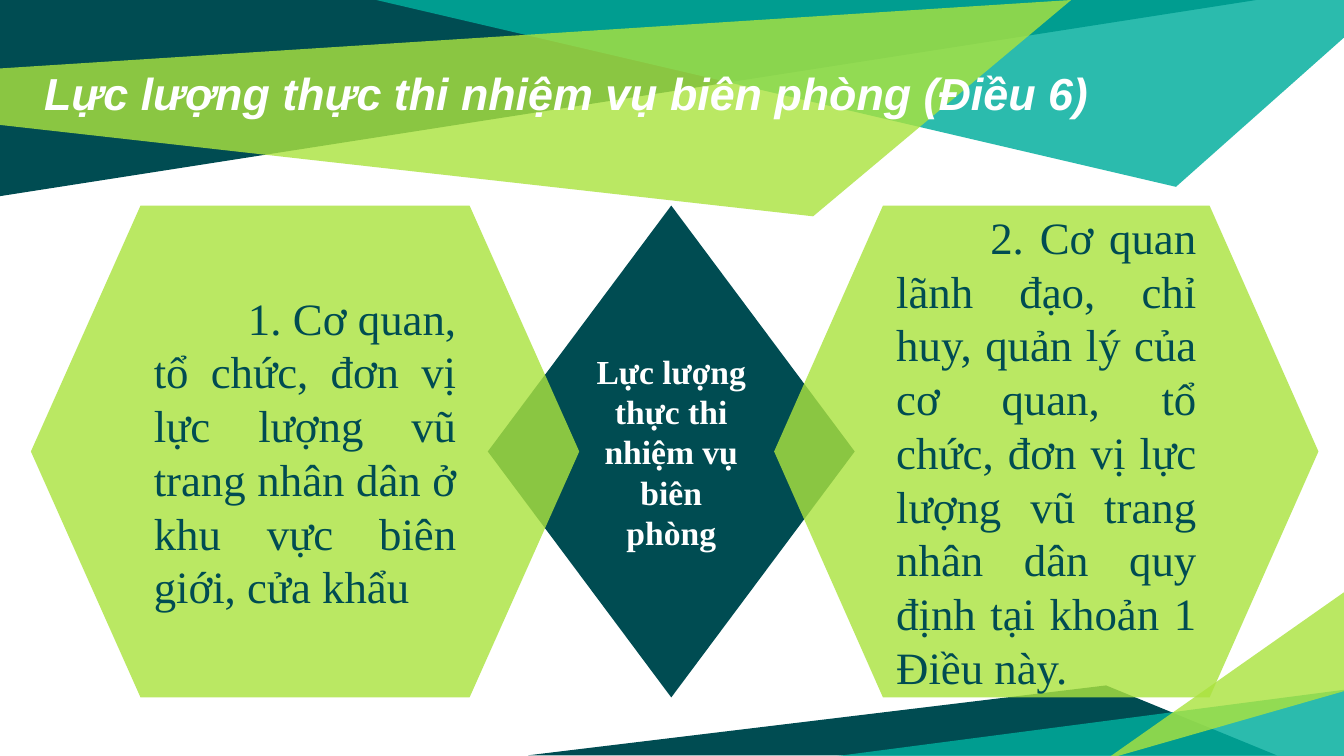
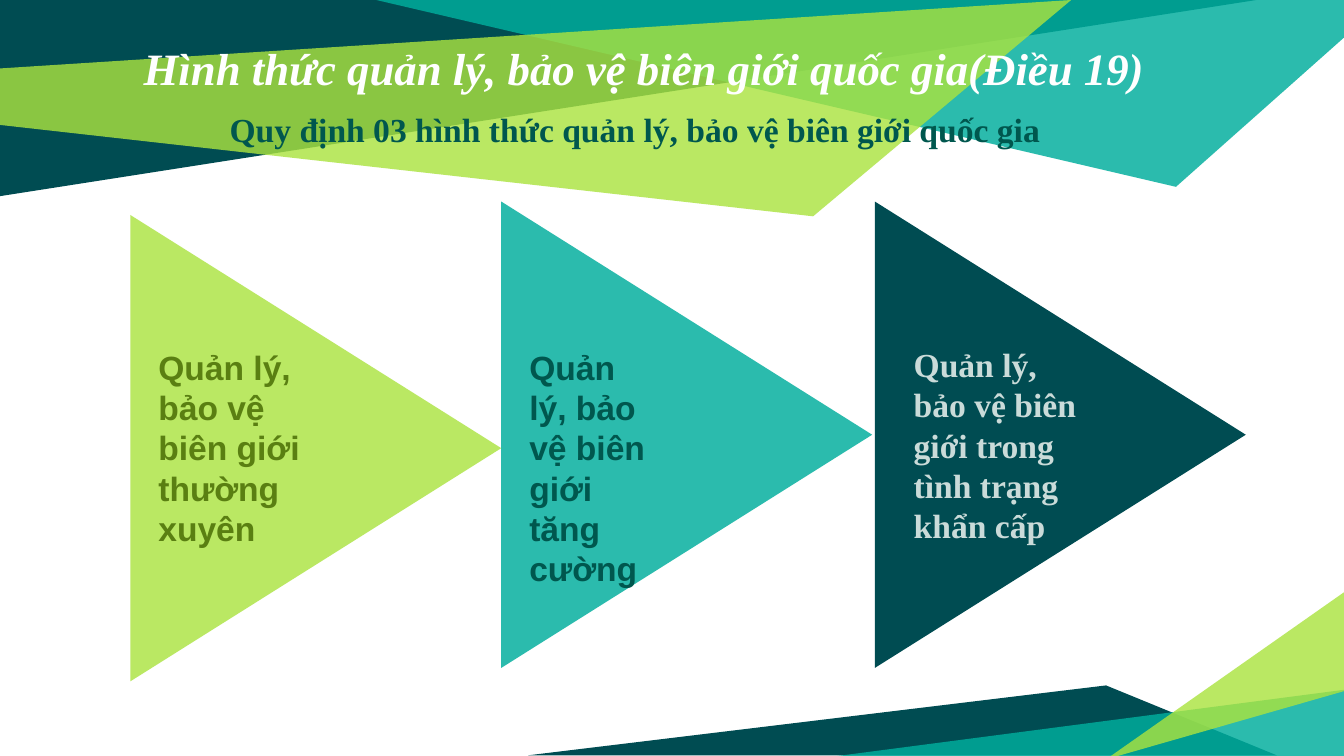
from dataclasses import dataclass

from lxml import etree
from pptx import Presentation
from pptx.dml.color import RGBColor as RGB
from pptx.enum.shapes import MSO_SHAPE as SHAPE
from pptx.enum.text import MSO_ANCHOR as ANCHOR, PP_ALIGN as ALIGN
from pptx.oxml.ns import qn
from pptx.util import Inches, Pt


@dataclass(frozen=True)
class Theme:
    # Fills: colour and opacity in percent
    dark: tuple = ("004C52", 100)
    teal: tuple = ("00AE9D", 83)
    lime: tuple = ("ABE33F", 81)
    # Text colours
    white: str = "FFFFFF"
    ink: str = "004C52"
    green: str = "00574E"
    olive: str = "5A7F12"
    mist: str = "CADBD9"
    # Type
    sans: str = "Arial"
    serif: str = "Times New Roman"
    large: int = 24
    small: int = 18


THEME = Theme()

# Bands shared by both slides, from back to front
BANDS = [
    (THEME.dark, [(0, 0), (0, 1.46), (9.35, 0)]),
    (THEME.teal, [(2.8, 0), (8.75, 1.39), (10, 0.28), (10, 0)]),
    (THEME.lime, [(-0.01, 0.51), (0, 0.93), (6.05, 1.61), (7.97, 0)]),
    (THEME.dark, [(3.93, 5.62), (9.5, 5.62), (8.23, 5.1)]),
    (THEME.teal, [(10.02, 5.13), (10.02, 5.65), (6.04, 5.65)]),
    (THEME.lime, [(10.01, 5.14), (10.01, 4.4), (8.23, 5.65)]),
]


def paint(shape, fill):
    color, opacity = fill
    shape.shadow.inherit = False
    shape.line.fill.background()
    shape.fill.solid()
    shape.fill.fore_color.rgb = RGB.from_string(color)
    if opacity < 100:
        srgb = shape.fill._xPr.find(qn("a:solidFill")).find(qn("a:srgbClr"))
        etree.SubElement(srgb, qn("a:alpha"), val=str(opacity * 1000))


def write(shape, text, font, size, color, align=ALIGN.LEFT, anchor=ANCHOR.TOP,
          bold=True, italic=False, inset=0.1, indent=0):
    frame = shape.text_frame
    frame.word_wrap = True
    frame.vertical_anchor = anchor
    frame.margin_left = frame.margin_right = Inches(0.1)
    frame.margin_top = frame.margin_bottom = Inches(inset)
    paragraph = frame.paragraphs[0]
    paragraph.text = text
    paragraph.alignment = align
    paragraph.font.name = font
    paragraph.font.size = Pt(size)
    paragraph.font.bold = bold
    paragraph.font.italic = italic
    paragraph.font.color.rgb = RGB.from_string(color)
    if indent:
        paragraph._p.get_or_add_pPr().set("indent", str(Inches(indent)))


def add_bands(slide):
    for fill, points in BANDS:
        start, *rest = [(Inches(x), Inches(y)) for x, y in points]
        builder = slide.shapes.build_freeform(*start)
        builder.add_line_segments(rest, close=True)
        paint(builder.convert_to_shape(), fill)


def add_figure(slide, kind, box, fill):
    figure = slide.shapes.add_shape(kind, *map(Inches, box))
    paint(figure, fill)
    return figure


def add_label(slide, box, text, font, color, **style):
    label = slide.shapes.add_textbox(*map(Inches, box))
    style = {"size": THEME.small, "inset": 0.05, **style}
    write(label, text, font, color=color, **style)


def add_title(slide, box, text, font):
    add_label(slide, box, text, font, THEME.white,
              size=THEME.large, inset=0.1, italic=True)


def start_slide(deck):
    slide = deck.slides.add_slide(deck.slide_layouts[6])
    add_bands(slide)
    return slide


def build_forces(deck):
    slide = start_slide(deck)
    add_title(slide, (0.23, 0.39, 8.91, 0.72),
              "Lực lượng thực thi nhiệm vụ biên phòng (Điều 6)", THEME.sans)
    top, height = 1.53, 3.66

    # Central topic
    topic = add_figure(slide, SHAPE.DIAMOND, (3.63, top, 2.73, height), THEME.dark)
    write(topic, "Lực lượng thực thi nhiệm vụ biên phòng", THEME.serif,
          THEME.small, THEME.white, ALIGN.CENTER, ANCHOR.MIDDLE)

    # The two groups of forces
    forces = [
        (0.23, 4.08, "1. Cơ quan, tổ chức, đơn vị lực lượng vũ trang nhân dân "
                     "ở khu vực biên giới, cửa khẩu"),
        (5.76, 4.05, "2. Cơ quan lãnh đạo, chỉ huy, quản lý của cơ quan, tổ chức, "
                     "đơn vị lực lượng vũ trang nhân dân quy định tại khoản 1 "
                     "Điều này."),
    ]
    for left, width, text in forces:
        force = add_figure(slide, SHAPE.FLOWCHART_PREPARATION,
                           (left, top, width, height), THEME.lime)
        write(force, text, THEME.serif, THEME.large, THEME.ink, ALIGN.JUSTIFY,
              ANCHOR.MIDDLE, bold=False, indent=0.7)


def build_management(deck):
    slide = start_slide(deck)
    add_title(slide, (0.97, 0.2, 7.75, 0.63),
              "Hình thức quản lý, bảo vệ biên giới quốc gia(Điều 19)", THEME.serif)

    # Three forms: arrow left and top, fill, label box, text, font, colour
    forms = [
        (0.97, 1.6, THEME.lime, (1.08, 2.53, 1.35, 1.62),
         "Quản lý, bảo vệ biên giới thường xuyên", THEME.sans, THEME.olive),
        (3.73, 1.5, THEME.teal, (3.84, 2.53, 1.16, 1.62),
         "Quản lý, bảo vệ biên giới tăng cường", THEME.sans, THEME.green),
        (6.51, 1.5, THEME.dark, (6.7, 2.51, 1.42, 1.62),
         "Quản lý, bảo vệ biên giới trong tình trạng khẩn cấp", THEME.serif,
         THEME.mist),
    ]
    for left, top, fill, label_box, text, font, color in forms:
        arrow = add_figure(slide, SHAPE.PENTAGON, (left, top, 2.76, 3.47), fill)
        arrow.adjustments[0] = 2.12
        add_label(slide, label_box, text, font, color)

    # Summary under the title
    add_label(slide, (1.61, 0.76, 6.52, 0.4),
              "Quy định 03 hình thức quản lý, bảo vệ biên giới quốc gia",
              THEME.serif, THEME.green)


def main():
    deck = Presentation()
    # Widescreen, 16:9
    deck.slide_width = Inches(10)
    deck.slide_height = deck.slide_width * 9 // 16
    build_forces(deck)
    build_management(deck)
    deck.save("out.pptx")


if __name__ == "__main__":
    main()
